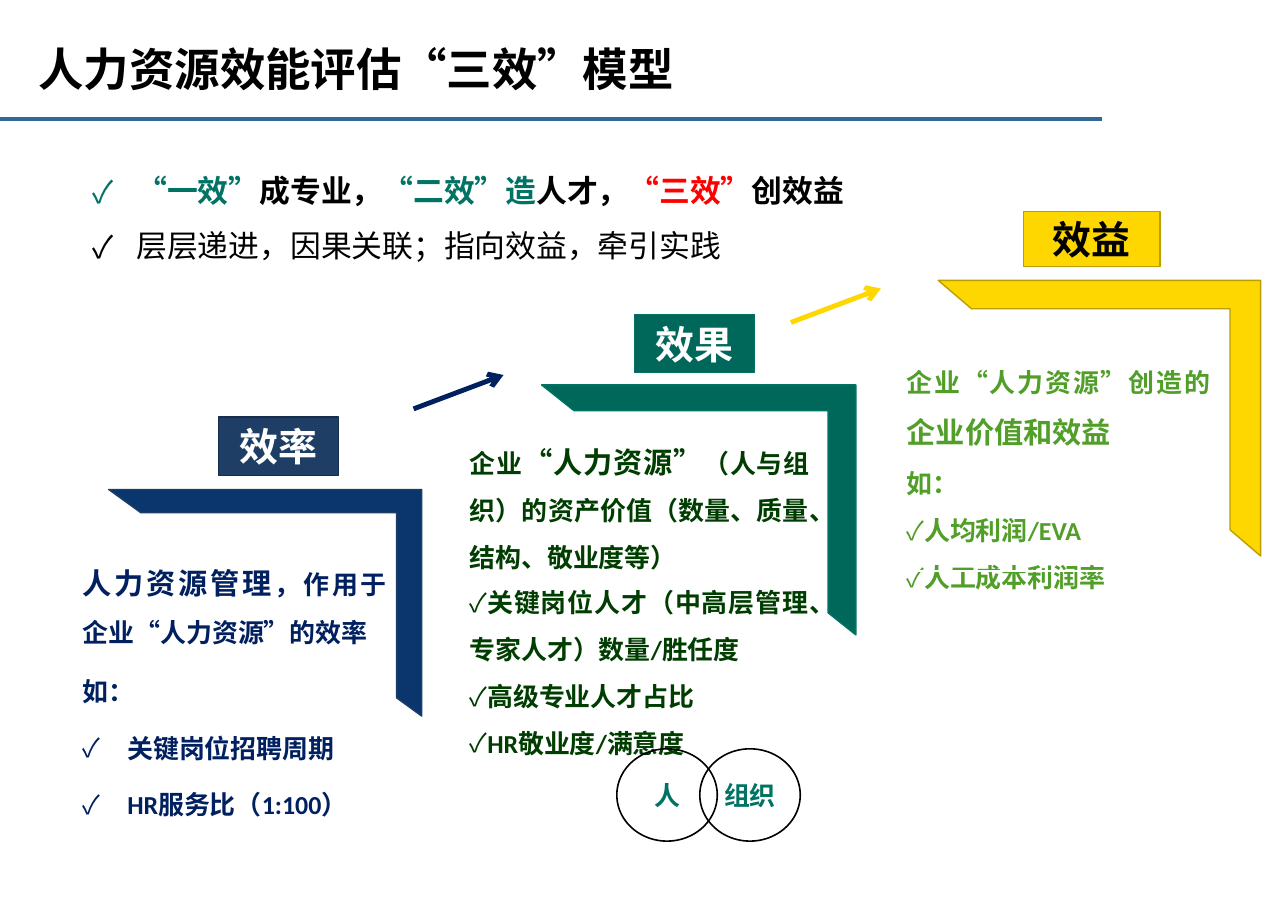
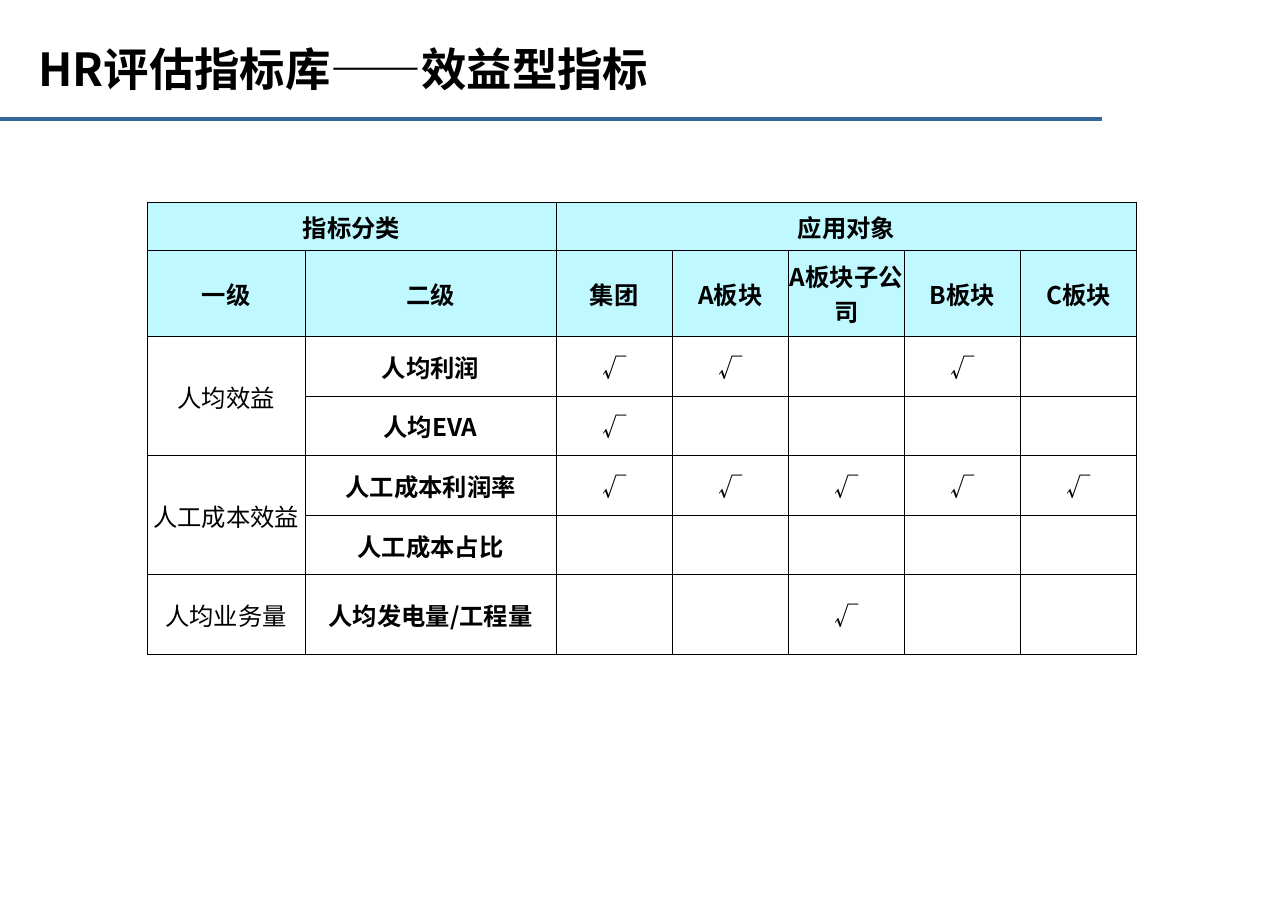
from dataclasses import dataclass

from lxml import etree
from pptx import Presentation
from pptx.dml.color import RGBColor
from pptx.enum import lang, shapes, text
from pptx.oxml import ns
from pptx.util import Inches, Pt


@dataclass(frozen=True)
class Theme:
    heading_font: str = "Noto Sans CJK SC"
    body_font: str = "Calibri"
    title_size: float = 28
    label_size: float = 24
    intro_size: float = 19
    strong_size: float = 18
    body_size: float = 16
    grid_size: float = 15
    black: str = "000000"
    white: str = "FFFFFF"
    red: str = "FF0000"
    rule: str = "336699"
    header: str = "BFF9FF"
    navy: str = "002060"
    navy_label: str = "1E3E66"
    navy_label_line: str = "162E4B"
    navy_frame: str = "0B366D"
    teal: str = "00685B"
    teal_line: str = "007364"
    dark_green: str = "003D00"
    yellow: str = "FED600"
    yellow_line: str = "BC9E00"
    light_green: str = "519E28"


THEME = Theme()
CENTER = text.PP_ALIGN.CENTER
JUSTIFY = text.PP_ALIGN.JUSTIFY
MIDDLE = text.MSO_ANCHOR.MIDDLE
NO_STYLE = "{2D5ABB26-0587-4C30-8999-92F81FD0307C}"
Box = tuple[float, float, float, float]


@dataclass(frozen=True)
class Run:
    words: str
    size: float
    color: str = THEME.black
    bold: bool = True
    font: str = THEME.body_font


@dataclass(frozen=True)
class Para:
    runs: tuple[Run, ...]
    align: text.PP_ALIGN | None = None
    spacing: float | None = None
    bullet: bool = False
    margin: float = 0


@dataclass(frozen=True)
class Stage:
    label: Run
    label_box: Box
    label_fill: str
    label_line: str
    frame_box: Box
    frame_fill: str
    frame_line: str
    table_box: Box
    row_heights: tuple[float, float]
    cells: tuple[tuple[Para, ...], tuple[Para, ...]]
    cell_fill: str | None = None


def inches(box: Box) -> tuple[int, ...]:
    return tuple(Inches(value) for value in box)


def rgb(color: str) -> RGBColor:
    return RGBColor.from_string(color)


def set_margins(target, left: float, top: float, right: float, bottom: float) -> None:
    target.margin_left, target.margin_top = Inches(left), Inches(top)
    target.margin_right, target.margin_bottom = Inches(right), Inches(bottom)


def write(frame, content: tuple[Para, ...]) -> None:
    for index, item in enumerate(content):
        paragraph = frame.add_paragraph() if index else frame.paragraphs[0]
        properties = paragraph._p.get_or_add_pPr()
        if item.bullet:
            properties.set("marL", str(Inches(item.margin)))
            properties.set("indent", str(Inches(-0.38)))
            bullet_font = etree.SubElement(properties, ns.qn("a:buFont"))
            bullet_font.set("typeface", THEME.heading_font)
            etree.SubElement(properties, ns.qn("a:buChar")).set("char", "✓")
        paragraph.alignment = item.align
        paragraph.line_spacing = item.spacing
        for piece in item.runs:
            run = paragraph.add_run()
            run.text = piece.words
            run.font.size = Pt(piece.size)
            run.font.bold = piece.bold
            run.font.color.rgb = rgb(piece.color)
            run.font.name = piece.font
            run.font.language_id = lang.MSO_LANGUAGE_ID.SIMPLIFIED_CHINESE
            east_asian = etree.SubElement(run.font._element, ns.qn("a:ea"))
            east_asian.set("typeface", THEME.heading_font)


def add_line(slide, start: tuple[float, float], end: tuple[float, float],
             color: str, width: float, arrow: bool = False) -> None:
    connector = slide.shapes.add_connector(
        shapes.MSO_CONNECTOR.STRAIGHT, *inches(start + end))
    connector.line.color.rgb = rgb(color)
    connector.line.width = Pt(width)
    properties = connector._element.spPr
    if arrow:
        outline = properties.find(ns.qn("a:ln"))
        etree.SubElement(outline, ns.qn("a:tailEnd")).set("type", "arrow")
    etree.SubElement(properties, ns.qn("a:effectLst"))


def add_shape(slide, kind: shapes.MSO_SHAPE, box: Box, fill: str | None,
              line: str, width: float, label: Run | None = None):
    shape = slide.shapes.add_shape(kind, *inches(box))
    shape.shadow.inherit = False
    if fill:
        shape.fill.solid()
        shape.fill.fore_color.rgb = rgb(fill)
    else:
        shape.fill.background()
    shape.line.color.rgb = rgb(line)
    shape.line.width = Pt(width)
    if label:
        frame = shape.text_frame
        frame.word_wrap = False
        frame.vertical_anchor = MIDDLE
        write(frame, (Para((label,), CENTER),))
    return shape


def add_text(slide, box: Box, content: tuple[Para, ...], wrap: bool = True):
    frame = slide.shapes.add_textbox(*inches(box)).text_frame
    frame.word_wrap = wrap
    write(frame, content)
    return frame


def add_table(slide, box: Box, widths: tuple[float, ...], heights: tuple[float, ...]):
    table = slide.shapes.add_table(len(heights), len(widths), *inches(box)).table
    table._tbl.tblPr.find(ns.qn("a:tableStyleId")).text = NO_STYLE
    table.first_row = table.horz_banding = False
    for column, width in zip(table.columns, widths):
        column.width = Inches(width)
    for row, height in zip(table.rows, heights):
        row.height = Inches(height)
    return table


def style_cell(cell, fill: str | None, border: str | None, width: float) -> None:
    if border:
        properties = cell._tc.get_or_add_tcPr()
        for side in ("lnL", "lnR", "lnT", "lnB"):
            line = etree.SubElement(properties, ns.qn(f"a:{side}"), w=str(Pt(width)))
            solid = etree.SubElement(line, ns.qn("a:solidFill"))
            etree.SubElement(solid, ns.qn("a:srgbClr"), val=border)
    if fill:
        cell.fill.solid()
        cell.fill.fore_color.rgb = rgb(fill)
    else:
        cell.fill.background()


def new_slide(presentation, title: str):
    slide = presentation.slides.add_slide(presentation.slide_layouts[6])
    add_line(slide, (0, 1.02), (9.43, 1.02), THEME.rule, 2.25)
    heading = Run(title, THEME.title_size, font=THEME.heading_font)
    frame = add_text(slide, (0.22, 0.22, 9.92, 0.73), (Para((heading,)),))
    frame.vertical_anchor = MIDDLE
    set_margins(frame, 0.11, 0.05, 0.11, 0.05)
    return slide


def label(words: str, color: str) -> Run:
    return Run(words, THEME.label_size, color, font=THEME.heading_font)


def body(color: str, *pieces: str, strong: int = -1, spacing: float = 1.25,
         bullet: bool = False, margin: float = 0) -> Para:
    runs = tuple(
        Run(words, THEME.strong_size if index == strong else THEME.body_size, color)
        for index, words in enumerate(pieces))
    return Para(runs, JUSTIFY, spacing, bullet, margin)


STAGES = (
    Stage(
        label("效率", THEME.white), (1.87, 3.57, 1.03, 0.5),
        THEME.navy_label, THEME.navy_label_line,
        (1.3, 3.82, 1.94, 2.68), THEME.navy_frame, THEME.navy_label,
        (0.63, 4.71, 2.76, 1.53), (0.87, 0.66),
        ((body(THEME.navy, "人力资源管理", "，作用于企业“人力资源”的效率", strong=0),),
         (body(THEME.navy, "如：", spacing=1.52),
          *(body(THEME.navy, words, spacing=1.52, bullet=True, margin=0.38)
            for words in ("关键岗位招聘周期", "HR服务比（1:100）")))),
    ),
    Stage(
        label("效果", THEME.white), (5.43, 2.69, 1.03, 0.5),
        THEME.teal, THEME.teal_line,
        (4.91, 3.02, 2.14, 2.69), THEME.teal, THEME.teal_line,
        (3.94, 3.67, 3.07, 1.9), (1.24, 0.66),
        ((body(THEME.dark_green, "企业", "“人力资源”",
               "（人与组织）的资产价值（数量、质量、结构、敬业度等）", strong=1),),
         tuple(body(THEME.dark_green, words, bullet=True)
               for words in ("关键岗位人才（中高层管理、专家人才）数量/胜任度",
                             "高级专业人才占比", "HR敬业度/满意度"))),
    ),
    Stage(
        label("效益", THEME.black), (8.76, 1.81, 1.17, 0.47),
        THEME.yellow, THEME.yellow_line,
        (8.23, 2.2, 2.36, 2.76), THEME.yellow, THEME.yellow_line,
        (7.68, 3.02, 2.76, 1.53), (0.87, 0.66),
        ((body(THEME.light_green, "企业“人力资源”创造的", "企业价值和效益", strong=1),),
         (body(THEME.light_green, "如："),
          *(body(THEME.light_green, words, bullet=True)
            for words in ("人均利润/EVA", "人工成本利润率")))),
        THEME.white,
    ),
)


def draw_stage(slide, stage: Stage) -> None:
    add_shape(slide, shapes.MSO_SHAPE.RECTANGLE, stage.label_box,
              stage.label_fill, stage.label_line, 0.85, stage.label)
    frame = add_shape(slide, shapes.MSO_SHAPE.HALF_FRAME, stage.frame_box,
                      stage.frame_fill, stage.frame_line, 0.85)
    frame.rotation = 90
    frame.adjustments[0], frame.adjustments[1] = 0.111, 0.103
    table = add_table(slide, stage.table_box, (stage.table_box[2],), stage.row_heights)
    for cell, content in zip(table.iter_cells(), stage.cells):
        set_margins(cell, 0.08, 0, 0.08, 0)
        style_cell(cell, stage.cell_fill, stage.cell_fill, 1)
        write(cell.text_frame, content)


def build_model(presentation) -> None:
    slide = new_slide(presentation, "人力资源效能评估“三效”模型")
    for stage in STAGES:
        draw_stage(slide, stage)
    for left, words in ((5.28, "人"), (5.99, "组织")):
        add_shape(slide, shapes.MSO_SHAPE.OVAL, (left, 6.41, 0.86, 0.79), None,
                  THEME.black, 1, Run(words, THEME.body_size, THEME.teal_line))
    for left, top, color in ((3.54, 3.5, THEME.navy), (6.77, 2.76, THEME.yellow)):
        add_line(slide, (left, top), (left + 0.77, top - 0.29), color, 3, arrow=True)
    slogan = tuple(
        Run(words, THEME.intro_size, color) for words, color in (
            ("“一效”", THEME.teal_line), ("成专业，", THEME.black),
            ("“二效”造", THEME.teal_line), ("人才，", THEME.black),
            ("“三效”", THEME.red), ("创效益", THEME.black)))
    logic = Run("层层递进，因果关联；指向效益，牵引实践", THEME.intro_size, bold=False)
    add_text(slide, (0.69, 1.26, 6.71, 1.06),
             tuple(Para(runs, None, 1.5, True, 0.38) for runs in (slogan, (logic,))),
             wrap=False)


INDICATORS = (
    ("指标分类", "", "应用对象", "", "", "", ""),
    ("一级", "二级", "集团", "A板块", "A板块子公司", "B板块", "C板块"),
    ("人均效益", "人均利润", "√", "√", "", "√", ""),
    ("", "人均EVA", "√", "", "", "", ""),
    ("人工成本效益", "人工成本利润率", "√", "√", "√", "√", "√"),
    ("", "人工成本占比", "", "", "", "", ""),
    ("人均业务量", "人均发电量/工程量", "", "", "√", "", ""),
)
MERGES = (((0, 0), (0, 1)), ((0, 2), (0, 6)), ((2, 0), (3, 0)), ((4, 0), (5, 0)))
HEADER_ROWS = 2
GRID_BOX = (1.26, 1.73, 8.47, 3.87)
NAME_WIDTHS = (1.35, 2.15)
UNIT_COUNT = 5


def build_indicators(presentation) -> None:
    slide = new_slide(presentation, "HR评估指标库——效益型指标")
    unit_width = (GRID_BOX[2] - sum(NAME_WIDTHS)) / UNIT_COUNT
    table = add_table(slide, GRID_BOX, NAME_WIDTHS + (unit_width,) * UNIT_COUNT,
                      (0.41, 0.74) + (0.51,) * 4 + (0.68,))
    for first, last in MERGES:
        table.cell(*first).merge(table.cell(*last))
    for row, values in enumerate(INDICATORS):
        for column, words in enumerate(values):
            cell = table.cell(row, column)
            header = row < HEADER_ROWS
            set_margins(cell, 0.01, 0.01, 0.01, 0)
            cell.vertical_anchor = MIDDLE
            style_cell(cell, THEME.header if header else None, THEME.black, 0.5)
            if words:
                run = Run(words, THEME.grid_size, bold=header or column == 1,
                          font=THEME.heading_font)
                write(cell.text_frame, (Para((run,), CENTER),))


def main() -> None:
    presentation = Presentation()
    presentation.slide_width = Pt(793.75)
    presentation.slide_height = Pt(567)
    build_model(presentation)
    build_indicators(presentation)
    presentation.save("out.pptx")


if __name__ == "__main__":
    main()
